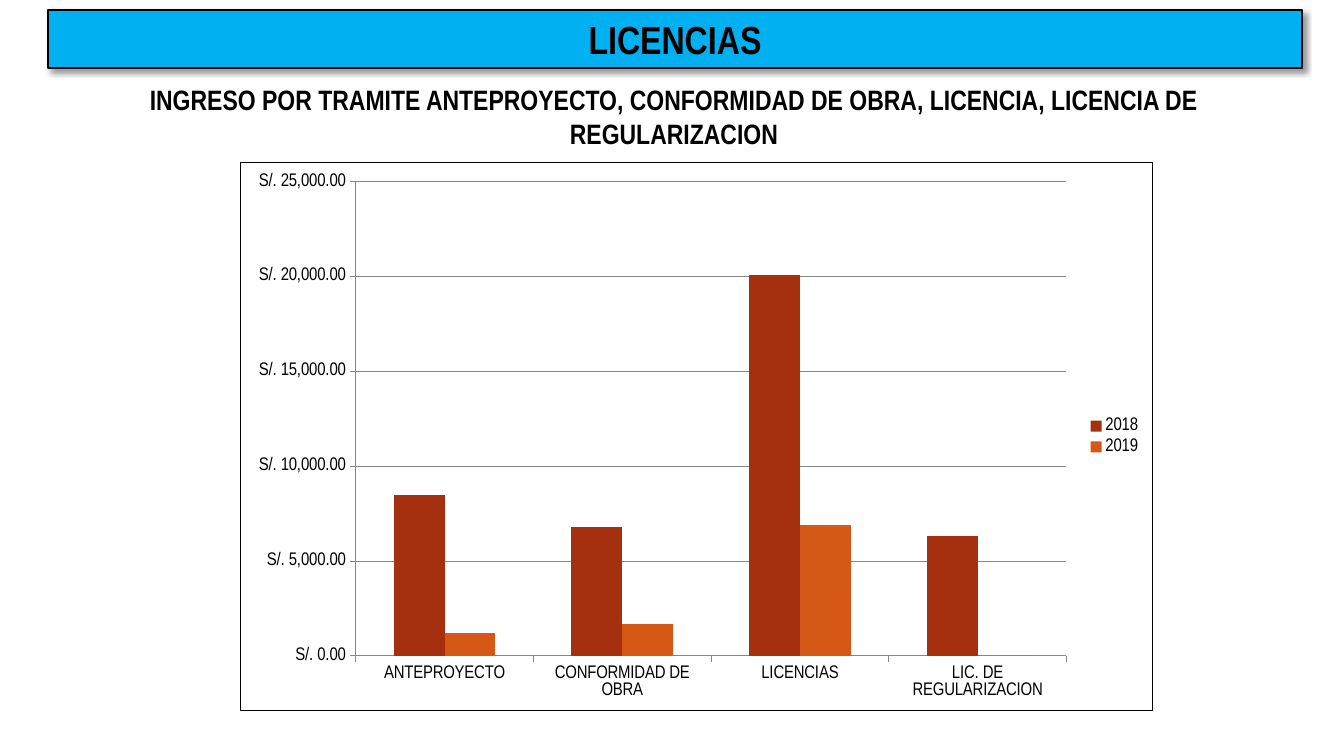
from lxml import etree
from pptx import Presentation
from pptx.chart.data import CategoryChartData
from pptx.dml.color import RGBColor
from pptx.enum.chart import XL_CHART_TYPE, XL_LEGEND_POSITION, XL_TICK_MARK
from pptx.enum.text import MSO_ANCHOR, MSO_AUTO_SIZE, PP_ALIGN
from pptx.oxml.ns import qn
from pptx.util import Emu, Pt

COLUMNS = XL_CHART_TYPE.COLUMN_CLUSTERED
LEGEND_RIGHT = XL_LEGEND_POSITION.RIGHT
TICK_OUTSIDE = XL_TICK_MARK.OUTSIDE
CENTER = PP_ALIGN.CENTER
TOP, MIDDLE = MSO_ANCHOR.TOP, MSO_ANCHOR.MIDDLE
NO_AUTOFIT = MSO_AUTO_SIZE.NONE

EMU_PER_PX = 914400 / 100.8
FONT = "Arial Narrow"
BLACK, GRID_GREY, BANNER_BLUE = "000000", "868686", "00B0F0"

CATEGORIES = ["ANTEPROYECTO", "CONFORMIDAD DE OBRA", "LICENCIAS", "LIC. DE REGULARIZACION"]
INCOME = {
    "2018": ([8500, 6800, 20100, 6300], "A5300F"),
    "2019": ([1200, 1700, 6900, 0], "D55816"),
}


def px(length):
    return Emu(round(length * EMU_PER_PX))


def color(hex_string):
    return RGBColor.from_string(hex_string)


def format_font(font, size, bold=False):
    font.name = FONT
    font.size = Pt(size)
    font.bold = bold
    font.color.rgb = color(BLACK)


def write_text(shape, text, size, bold=True, anchor=MIDDLE):
    frame = shape.text_frame
    frame.word_wrap = True
    frame.auto_size = NO_AUTOFIT
    frame.vertical_anchor = anchor
    para = frame.paragraphs[0]
    para.alignment = CENTER
    span = para.add_run()
    span.text = text
    format_font(span.font, size, bold)


def add_shadow(shape, blur, distance, angle, opacity):
    """Cast an outer black shadow; blur and distance in points, opacity in percent."""
    effects = etree.SubElement(shape._element.spPr, qn("a:effectLst"))
    shadow = etree.SubElement(
        effects, qn("a:outerShdw"), blurRad=str(Pt(blur)), dist=str(Pt(distance)),
        dir=str(angle * 60000), algn="tl", rotWithShape="0")
    tint = etree.SubElement(shadow, qn("a:srgbClr"), val=BLACK)
    etree.SubElement(tint, qn("a:alpha"), val=str(opacity * 1000))


def add_banner(page, text):
    banner = page.shapes.title
    banner.left, banner.top, banner.width, banner.height = map(px, (48, 10, 1254, 58))
    banner.fill.solid()
    banner.fill.fore_color.rgb = color(BANNER_BLUE)
    banner.line.color.rgb = color(BLACK)
    banner.line.width = Pt(1)
    add_shadow(banner, blur=4, distance=3, angle=45, opacity=40)
    write_text(banner, text, size=28)


def add_subtitle(page, text):
    box = page.shapes.add_textbox(*map(px, (62, 78, 1224, 72)))
    write_text(box, text, size=20, anchor=TOP)


def add_chart_border(chart, width):
    area = etree.Element(qn("c:spPr"))
    etree.SubElement(area, qn("a:noFill"))
    line = etree.SubElement(area, qn("a:ln"), w=str(Pt(width)))
    fill = etree.SubElement(line, qn("a:solidFill"))
    etree.SubElement(fill, qn("a:srgbClr"), val=BLACK)
    chart._chartSpace.find(qn("c:chart")).addnext(area)


def format_axis(axis):
    axis.major_tick_mark = TICK_OUTSIDE
    axis.format.line.color.rgb = color(GRID_GREY)
    axis.format.line.width = Pt(0.75)


def add_income_chart(page):
    data = CategoryChartData()
    data.categories = CATEGORIES
    for year, (amounts, _) in INCOME.items():
        data.add_series(year, amounts)
    chart = page.shapes.add_chart(COLUMNS, *map(px, (240, 162, 913, 549)), data).chart
    format_font(chart.font, 13)
    chart.has_title = False
    chart.has_legend = True
    chart.legend.position = LEGEND_RIGHT
    chart.legend.include_in_layout = False

    plot = chart.plots[0]
    plot.gap_width = 150
    plot.overlap = 0
    plot.vary_by_categories = False
    for series, (_, fill) in zip(plot.series, INCOME.values()):
        series.format.fill.solid()
        series.format.fill.fore_color.rgb = color(fill)

    format_axis(chart.category_axis)
    amounts_axis = chart.value_axis
    format_axis(amounts_axis)
    amounts_axis.minimum_scale = 0
    amounts_axis.maximum_scale = 25000
    amounts_axis.major_unit = 5000
    amounts_axis.tick_labels.number_format = '"S/."\\ #,##0.00'
    amounts_axis.tick_labels.number_format_is_linked = False
    amounts_axis.has_major_gridlines = True
    grid_line = amounts_axis.major_gridlines.format.line
    grid_line.color.rgb = color(GRID_GREY)
    grid_line.width = Pt(0.75)
    add_chart_border(chart, 0.75)


def main():
    deck = Presentation()
    deck.slide_width, deck.slide_height = px(1344), px(756)
    page = deck.slides.add_slide(deck.slide_layouts[5])
    add_subtitle(page, "INGRESO POR TRAMITE ANTEPROYECTO, CONFORMIDAD DE OBRA, "
                       "LICENCIA, LICENCIA DE REGULARIZACION")
    add_income_chart(page)
    add_banner(page, "LICENCIAS")
    deck.save("out.pptx")


if __name__ == "__main__":
    main()
